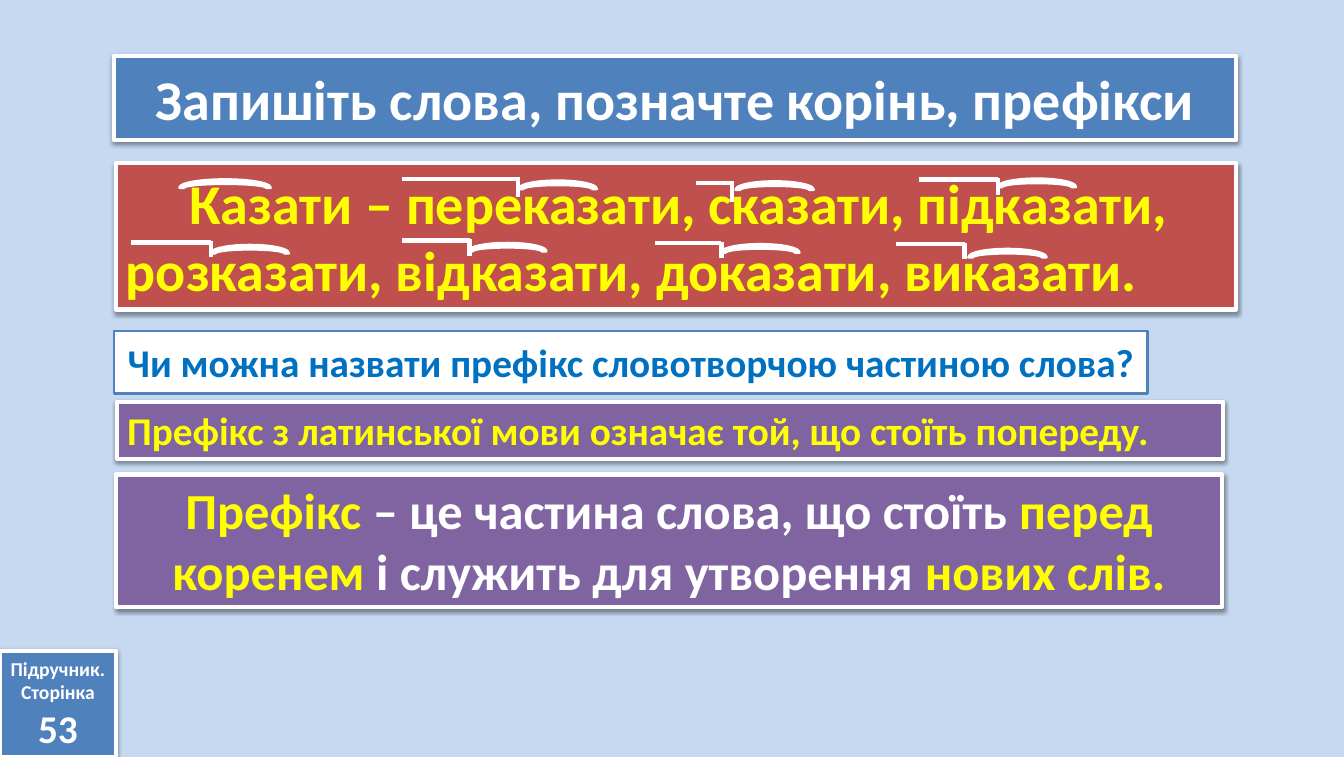
import pptx
import pptx.dml.color
import pptx.enum.shapes
import pptx.enum.text
import pptx.oxml
import pptx.oxml.ns
import pptx.util
from pptx.util import Cm

WHITE, YELLOW, BLUE, RED, PURPLE = "FFFFFF", "FFFF00", "4F81BD", "C0504D", "8064A2"
LEFT, CENTER = pptx.enum.text.PP_ALIGN.LEFT, pptx.enum.text.PP_ALIGN.CENTER
TOP, MIDDLE = pptx.enum.text.MSO_ANCHOR.TOP, pptx.enum.text.MSO_ANCHOR.MIDDLE

PREFIX_MARKS = [
    (10.13, 13.04, 4.5, 4.95),
    (17.53, 18.42, 4.6, 5.08),
    (23.14, 25.12, 4.52, 4.9),
    (3.3, 5.31, 6.1, 6.48),
    (10.11, 11.82, 6.05, 6.43),
    (16.48, 18.16, 6.12, 6.5),
    (22.56, 24.28, 6.15, 6.53),
]
ROOT_ARCS = [
    (4.52, 4.52, 2.29),
    (13.06, 4.55, 1.96),
    (18.52, 4.57, 1.96),
    (25.12, 4.5, 1.96),
    (5.31, 6.17, 1.96),
    (11.79, 6.12, 1.96),
    (18.16, 6.15, 1.96),
    (24.38, 6.27, 1.96),
]


def color(hex_string):
    return pptx.dml.color.RGBColor.from_string(hex_string)


def paint(shape, fill, line, width):
    shape.shadow.inherit = False
    shape.fill.solid()
    shape.fill.fore_color.rgb = color(fill)
    shape.line.color.rgb = color(line)
    shape.line.width = pptx.util.Pt(width)


def add_shadow(shape):
    effects = shape._element.spPr.find(pptx.oxml.ns.qn("a:effectLst"))
    effects.append(pptx.oxml.parse_xml(
        f'<a:outerShdw {pptx.oxml.ns.nsdecls("a")} blurRad="40000" dist="20000" '
        'dir="5400000" rotWithShape="0"><a:srgbClr val="000000">'
        '<a:alpha val="38000"/></a:srgbClr></a:outerShdw>'))


def write(shape, lines, text_color, alignment=CENTER, anchor=MIDDLE):
    frame = shape.text_frame
    frame.word_wrap = True
    frame.auto_size = pptx.enum.text.MSO_AUTO_SIZE.NONE
    frame.vertical_anchor = anchor
    for index, (size, runs) in enumerate(lines):
        paragraph = frame.add_paragraph() if index else frame.paragraphs[0]
        paragraph.alignment = alignment
        paragraph.font.name = "Calibri"
        paragraph.font.size = pptx.util.Pt(size)
        paragraph.font.bold = True
        paragraph.font.color.rgb = color(text_color)
        for text, run_color in runs:
            run = paragraph.add_run()
            run.text = text
            if run_color != text_color:
                run.font.color.rgb = color(run_color)


def add_box(slide, left, top, width, height):
    return slide.shapes.add_shape(
        pptx.enum.shapes.MSO_SHAPE.RECTANGLE, Cm(left), Cm(top), Cm(width), Cm(height))


def add_panel(slide, place, fill, lines, text_color, alignment=CENTER, anchor=MIDDLE):
    panel = add_box(slide, *place)
    paint(panel, fill, WHITE, 3)
    add_shadow(panel)
    write(panel, lines, text_color, alignment, anchor)
    return panel


def add_title(slide, text):
    title = slide.shapes.title
    title.left, title.top, title.width, title.height = Cm(2.87), Cm(1.4), Cm(28.24), Cm(2.13)
    paint(title, BLUE, WHITE, 3)
    add_shadow(title)
    write(title, [(40, [(text, WHITE)])], WHITE)


def add_root_arc(slide, left, top, width):
    arc = slide.shapes.add_shape(
        pptx.enum.shapes.MSO_SHAPE.BLOCK_ARC, Cm(left), Cm(top), Cm(width), Cm(0.41))
    paint(arc, WHITE, WHITE, 2)


def add_prefix_mark(slide, left, right, top, bottom):
    mark = slide.shapes.add_group_shape()
    for ends in ((right, top, left, top), (right, top - 0.04, right, bottom)):
        line = mark.shapes.add_connector(
            pptx.enum.shapes.MSO_CONNECTOR.STRAIGHT, *(Cm(end) for end in ends))
        line.line.color.rgb = color(WHITE)
        line.line.width = pptx.util.Pt(3)
        line._element.spPr.append(
            pptx.oxml.parse_xml(f'<a:effectLst {pptx.oxml.ns.nsdecls("a")}/>'))


def main():
    presentation = pptx.Presentation()
    presentation.slide_width, presentation.slide_height = Cm(33.83), Cm(19.05)
    slide = presentation.slides.add_slide(presentation.slide_layouts.get_by_name("Title Only"))
    slide.background.fill.solid()
    slide.background.fill.fore_color.rgb = color("C6D9F1")

    add_title(slide, "Запишіть слова, позначте корінь, префікси")

    words = add_panel(slide, (2.92, 4.11, 28.19, 3.68), RED, [(40, [(
        "Казати – переказати, сказати, підказати, розказати, відказати, "
        "доказати, виказати.", YELLOW)])], YELLOW, LEFT, TOP)
    words.text_frame.paragraphs[0]._p.get_or_add_pPr().set("indent", str(Cm(1.6)))
    for arc in ROOT_ARCS:
        add_root_arc(slide, *arc)
    for mark in PREFIX_MARKS:
        add_prefix_mark(slide, *mark)

    add_panel(slide, (0, 16.38, 2.92, 2.67), BLUE, [
        (14, [("Підручник.", WHITE)]),
        (14, [("Сторінка", WHITE)]),
        (28, [("53", WHITE)])], WHITE)

    add_panel(slide, (2.95, 10.11, 27.84, 1.45), PURPLE, [(28, [(
        "Префікс з латинської мови означає той, що стоїть попереду.", YELLOW)])],
        YELLOW, LEFT, TOP)

    question = add_box(slide, 2.87, 8.33, 26.01, 1.57)
    paint(question, WHITE, BLUE, 2)
    write(question, [(28, [(
        "Чи можна назвати префікс словотворчою частиною слова?", "0070C0")])], "0070C0")

    add_panel(slide, (2.92, 11.94, 27.84, 3.33), PURPLE, [(36, [
        ("Префікс ", YELLOW),
        ("– це частина слова, що стоїть ", WHITE),
        ("перед коренем", YELLOW),
        (" і служить для утворення ", WHITE),
        ("нових слів.", YELLOW)])], YELLOW, anchor=TOP)

    presentation.save("out.pptx")


if __name__ == "__main__":
    main()
